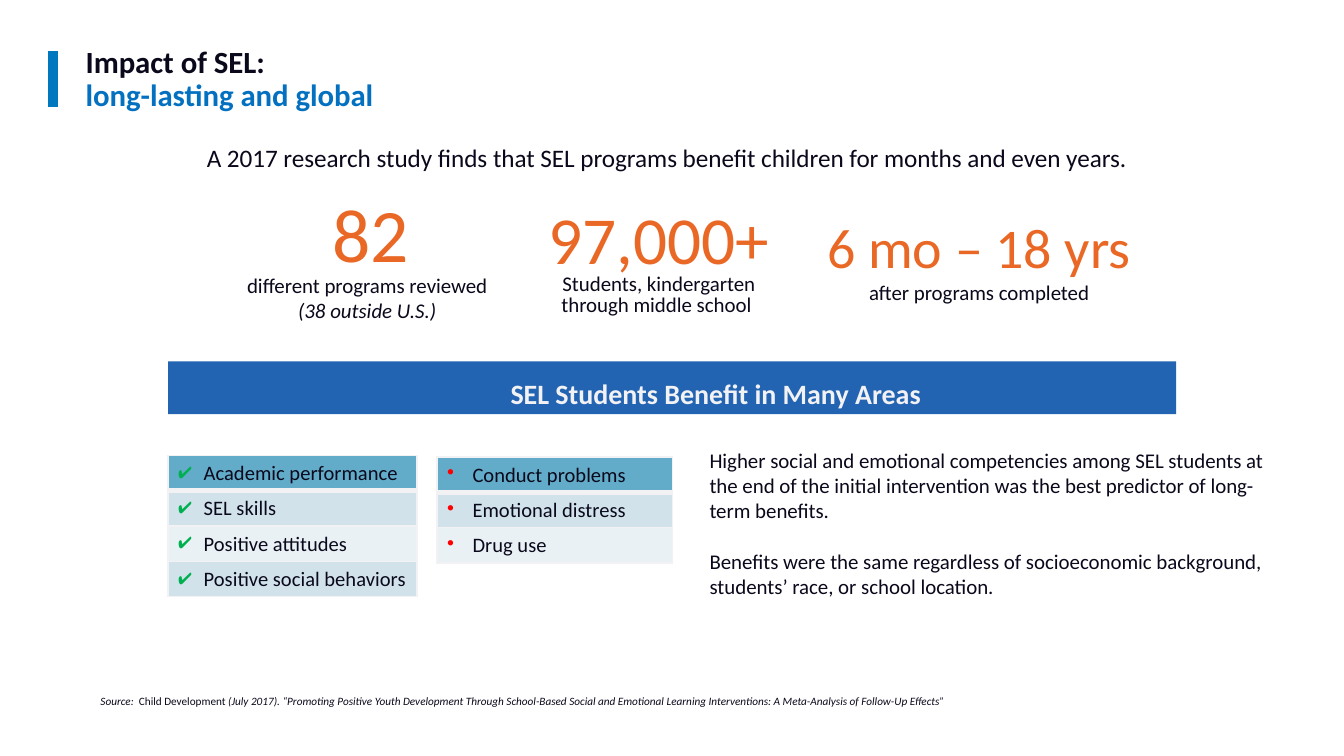
from lxml import etree
from pptx import Presentation, util as u
from pptx.dml.color import RGBColor
from pptx.enum import shapes, text
from pptx.oxml.ns import qn

INK, BLUE, ORANGE, PALE = "0A091B", "0370C0", "EA6826", "F2F2F5"
MID = text.PP_ALIGN.CENTER


def color(hue):
    """Turn a hex string into a colour."""
    return RGBColor.from_string(hue)


def sub(node, tag, **attrs):
    """Append a drawing element with attributes."""
    return etree.SubElement(node, qn(tag), attrs)


def write(para, words, size=11.2, hue=INK, bold=False, italic=False):
    """Add a formatted run to a paragraph; a vertical tab breaks the line."""
    parts = words.split("\v")
    for i, part in enumerate(parts):
        if i:
            para.add_line_break()
        run = para.add_run()
        run.text = part
        font = run.font
        font.name, font.size = "Calibri", u.Pt(size)
        font.bold, font.italic = bold, italic
        font.color.rgb = color(hue)


def fit(frame, side=0.1, edge=0.05):
    """Set wrapping, top anchor and margins of a text frame."""
    frame.word_wrap = True
    frame.vertical_anchor = text.MSO_ANCHOR.TOP
    frame.margin_left = frame.margin_right = u.Cm(side)
    frame.margin_top = frame.margin_bottom = u.Cm(edge)


def label(slide, place, paras, align=None, gap=0, **pad):
    """Add a text box from (line spacing, runs) pairs."""
    frame = slide.shapes.add_textbox(*map(u.Cm, place)).text_frame
    fit(frame, **pad)
    for i, (lead, runs) in enumerate(paras):
        para = frame.add_paragraph() if i else frame.paragraphs[0]
        para.alignment, para.line_spacing = align, lead
        if i and gap:
            para.space_before = u.Pt(gap)
        for words, form in runs:
            write(para, words, **form)


def accent(slide):
    """Draw the upright bar beside the title."""
    bar = slide.shapes.add_connector(
        shapes.MSO_CONNECTOR.STRAIGHT, u.Cm(1), u.Cm(0.97), u.Cm(1), u.Cm(2.03))
    bar.line.color.rgb = color("0078C0")
    bar.line.width = u.Pt(5)
    sub(bar._element.spPr, "a:effectLst")


def banner(slide, words):
    """Draw the filled heading band."""
    band = slide.shapes.add_shape(
        shapes.MSO_SHAPE.RECTANGLE, *map(u.Cm, (3.18, 6.83, 19.05, 1)))
    band.shadow.inherit = False
    band.fill.solid()
    band.fill.fore_color.rgb = color("2264B1")
    band.line.fill.background()
    fit(band.text_frame, edge=0.28)
    para = band.text_frame.paragraphs[0]
    para.alignment = MID
    para._p.get_or_add_pPr().set("marL", str(u.Cm(1.65)))
    write(para, words, size=15, hue=PALE, bold=True)


def bullet(para, mark, hue):
    """Give a paragraph a coloured hanging bullet."""
    props = para._p.get_or_add_pPr()
    props.set("marL", str(u.Cm(0.48)))
    props.set("indent", str(-u.Cm(0.48)))
    sub(sub(props, "a:buClr"), "a:srgbClr", val=hue)
    sub(props, "a:buChar", char=mark)


def border(cell, top, base):
    """Outline a cell with given top and bottom weights."""
    props = cell._tc.get_or_add_tcPr()
    for i, (side, width) in enumerate(zip("LRTB", (1, 1, top, base))):
        line = etree.Element(qn(f"a:ln{side}"), w=str(u.Pt(width)))
        sub(sub(line, "a:solidFill"), "a:srgbClr", val=PALE)
        props.insert(i, line)


def grid(slide, left, top, width, items, mark, hue):
    """Add a one-column table of bulleted items."""
    tall = 0.667
    table = slide.shapes.add_table(
        len(items), 1, *map(u.Cm, (left, top, width, tall * len(items)))).table
    for i, item in enumerate(items):
        table.rows[i].height = u.Cm(tall)
        cell = table.cell(i, 0)
        cell.margin_left = cell.margin_right = u.Cm(0.19)
        cell.margin_top = cell.margin_bottom = u.Cm(0.1)
        cell.fill.solid()
        shade = ("EAF1F5", "D1E2EB")[i % 2] if i else "62ACC9"
        cell.fill.fore_color.rgb = color(shade)
        border(cell, 3 if i == 1 else 1, 1 if i else 3)
        para = cell.text_frame.paragraphs[0]
        bullet(para, mark, hue)
        write(para, item, size=11)


def main():
    """Build and save the slide."""
    deck = Presentation()
    deck.slide_width, deck.slide_height = u.Cm(25.4), u.Cm(14.29)
    slide = deck.slides.add_slide(deck.slide_layouts[6])

    accent(slide)
    head = dict(size=16.5, bold=True)
    label(slide, (1.52, 0.84, 7.14, 1.35), [
        (0.9, [("Impact of SEL:", head)]),
        (0.9, [("long-lasting and global", dict(head, hue=BLUE))])])
    label(slide, (3.81, 2.64, 18.47, 1.24), [(None, [(
        "A 2017 research study finds that SEL programs benefit children "
        "for months and even years.", dict(size=13.5))])])

    label(slide, (5.46, 3.53, 3.1, 1.73),
          [(None, [("82", dict(size=40.5, hue=ORANGE))])], MID, side=0, edge=0)
    label(slide, (4.42, 5.11, 5.13, 1), [(None, [
        ("different programs reviewed \v", {}),
        ("(38 outside U.S.) ", dict(italic=True))])], MID)
    label(slide, (10.19, 4.1, 4.52, 1.97), [
        (0.7, [("97,000+", dict(size=36, hue=ORANGE))]),
        (0.8, [("Students, kindergarten through middle school ", {})])], MID)
    label(slide, (15.42, 3.84, 6.17, 2.18), [
        (1.1, [("6 mo – 18 yrs", dict(size=30, hue=ORANGE))]),
        (None, [("after programs completed", {})])], MID)

    banner(slide, "SEL Students Benefit in Many Areas")
    grid(slide, 3.18, 8.61, 4.7, [
        "Academic performance", "SEL skills", "Positive attitudes",
        "Positive social behaviors"], "✔", "00B050")
    grid(slide, 8.26, 8.64, 4.45, [
        "Conduct problems", "Emotional distress", "Drug use"], "•", "FF0000")
    label(slide, (13.31, 8.41, 10.72, 3), [
        (None, [("Higher social and emotional competencies among SEL students "
                 "at the end of the initial intervention was the best "
                 "predictor of long-term benefits.", {})]),
        (None, [("Benefits were the same regardless of socioeconomic "
                 "background, students’ race, or school location.", {})])],
        gap=13.7)

    note = dict(size=6, italic=True)
    label(slide, (1.8, 13.08, 19.02, 0.36), [(None, [
        ("Source:  ", note), ("Child Development", dict(size=6)),
        (" (July 2017). “Promoting Positive Youth Development Through "
         "School-Based Social and Emotional Learning Interventions: "
         "A Meta-Analysis of Follow-Up Effects”", note)])])
    deck.save("out.pptx")


if __name__ == "__main__":
    main()
